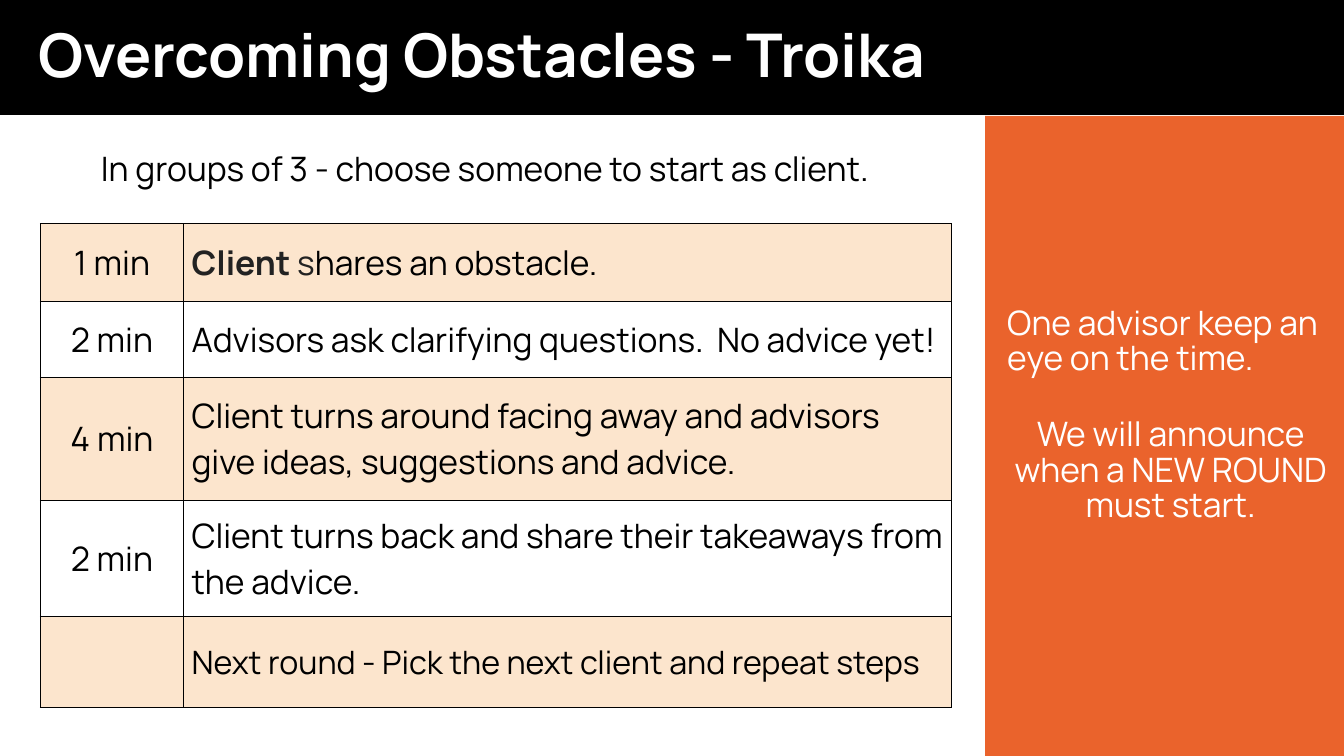
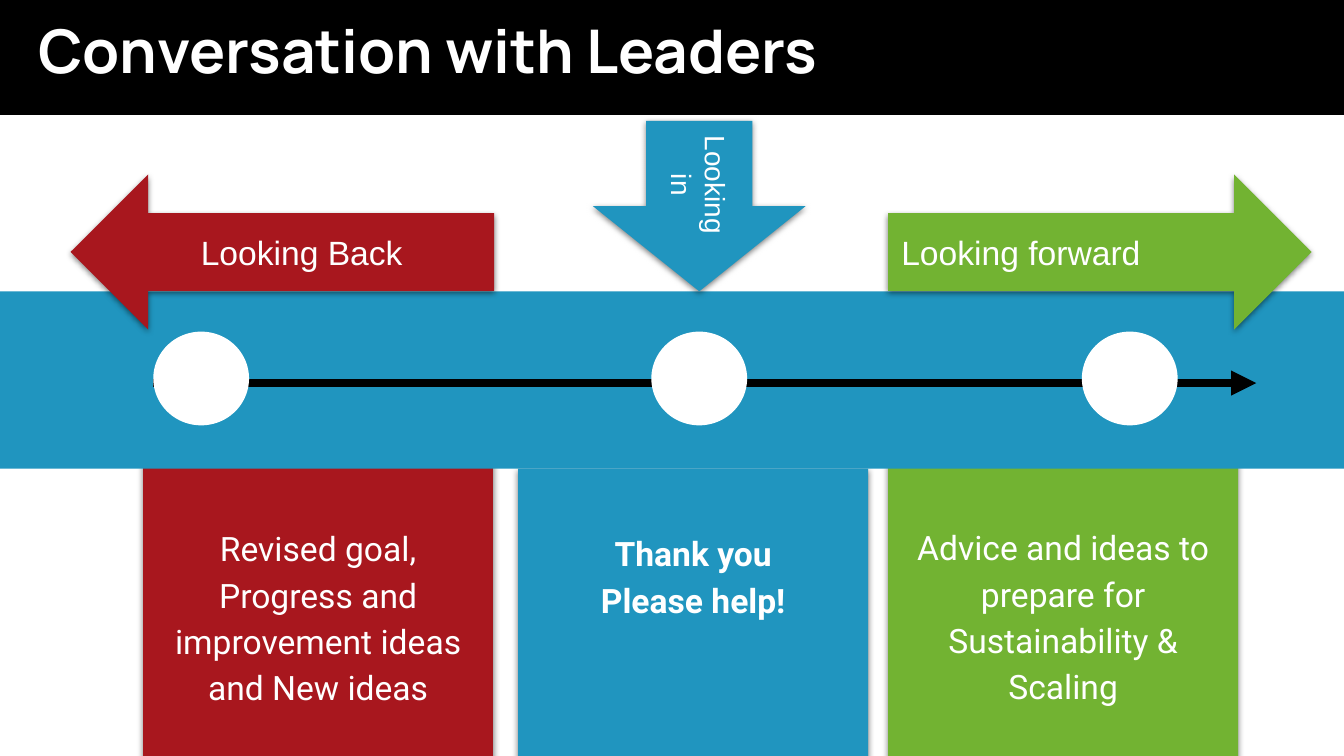
from collections import namedtuple

from lxml import etree
from pptx import Presentation
from pptx import util as u
from pptx.dml import color
from pptx.enum import shapes, text
from pptx.oxml import ns

Box = namedtuple("Box", "left top width height")
Span = namedtuple("Span", "words color bold")

BLACK, WHITE, INK = "000000", "FFFFFF", "222222"
ORANGE, CREAM = "EA632C", "FCE5CD"
RED, BLUE, GREEN = "A8171E", "2095BF", "72B332"
WIDTH, HEIGHT, BAND_HEIGHT = 13.33, 7.5, 1.14
LEFT, CENTER = text.PP_ALIGN.LEFT, text.PP_ALIGN.CENTER
TOP, MIDDLE = text.MSO_ANCHOR.TOP, text.MSO_ANCHOR.MIDDLE
SHAPE = shapes.MSO_SHAPE


def rgb(value):
    return color.RGBColor.from_string(value)


def inches(values):
    return [u.Inches(value) for value in values]


def add_xml(parent, tag, **attributes):
    return etree.SubElement(parent, ns.qn(tag), attributes)


def add_spans(para, spans, font, size, align=LEFT, spacing=None):
    para.alignment = align
    if spacing:
        para.line_spacing = spacing
    for span in spans:
        run = para.add_run()
        run.text = span.words
        run.font.name = font
        run.font.size = u.Pt(size)
        run.font.bold = span.bold
        run.font.color.rgb = rgb(span.color)


def set_frame(frame, insets, anchor=MIDDLE):
    frame.word_wrap = True
    frame.vertical_anchor = anchor
    (frame.margin_left, frame.margin_top,
     frame.margin_right, frame.margin_bottom) = inches(insets)


def add_lines(frame, lines, font, size, align=LEFT, spacing=None, bold=False, ink=WHITE):
    for index, line in enumerate(lines):
        para = frame.add_paragraph() if index else frame.paragraphs[0]
        add_spans(para, [Span(line, ink, bold)], font, size, align, spacing)


def add_block(page, kind, box, fill, shadow=False):
    block = page.shapes.add_shape(kind, *inches(box))
    block.fill.solid()
    block.fill.fore_color.rgb = rgb(fill)
    block.line.fill.background()
    block.shadow.inherit = False
    if shadow:
        effects = block._element.spPr.find(ns.qn("a:effectLst"))
        outer = add_xml(effects, "a:outerShdw", blurRad=str(u.Pt(4.5)), dist=str(u.Pt(1.5)),
                        dir="5400000", algn="t", rotWithShape="0")
        tint = add_xml(outer, "a:srgbClr", val=BLACK)
        add_xml(tint, "a:alpha", val="50000")
    return block


def add_label(page, box, line, size, insets, ink, **style):
    label = page.shapes.add_textbox(*inches(box))
    set_frame(label.text_frame, insets, style.pop("anchor", MIDDLE))
    add_lines(label.text_frame, [line], "Manrope", size, ink=ink, **style)


def add_page(deck, title, title_top):
    page = deck.slides.add_slide(deck.slide_layouts[6])
    add_block(page, SHAPE.RECTANGLE, Box(0, 0, WIDTH, BAND_HEIGHT), BLACK)
    add_label(page, Box(0.28, title_top, 11.5, 0.6), title, 43,
              (0.1, 0.05, 0.1, 0.05), WHITE, bold=True, spacing=0.9)
    return page


def add_borders(cell):
    properties = cell._tc.get_or_add_tcPr()
    for index, side in enumerate(("a:lnL", "a:lnR", "a:lnT", "a:lnB")):
        line = etree.Element(ns.qn(side), w=str(u.Pt(0.75)))
        add_xml(add_xml(line, "a:solidFill"), "a:srgbClr", val=BLACK)
        properties.insert(index, line)


def add_agenda(page, box, steps):
    column_widths = (1.42, box.width - 1.42)
    row_heights = (0.77, 0.75, 1.23, 1.15, 0.9)
    agenda = page.shapes.add_table(len(steps), 2, *inches(box)).table
    agenda.first_row = agenda.horz_banding = False
    for column, width in zip(agenda.columns, column_widths):
        column.width = u.Inches(width)
    for index, (minutes, spans, size) in enumerate(steps):
        agenda.rows[index].height = u.Inches(row_heights[index])
        contents = ([Span(minutes, BLACK, False)] if minutes else [], spans)
        for column, content in enumerate(contents):
            cell = agenda.cell(index, column)
            cell.fill.solid()
            cell.fill.fore_color.rgb = rgb(WHITE if index % 2 else CREAM)
            cell.vertical_anchor = MIDDLE
            cell.margin_left = cell.margin_right = u.Inches(0.08)
            cell.margin_top = cell.margin_bottom = u.Inches(0.08)
            add_borders(cell)
            add_spans(cell.text_frame.paragraphs[0], content, "Manrope", size,
                      LEFT if column else CENTER)


def add_sidebar(page, box):
    frame = add_block(page, SHAPE.RECTANGLE, box, ORANGE).text_frame
    set_frame(frame, (0.22, 0.05, 0.1, 0.45))
    add_lines(frame, ["One advisor keep an eye on the time.", "We will announce",
                      "when a NEW ROUND must start."],
              "Manrope", 24, CENTER, 0.88)
    frame.paragraphs[0].alignment = LEFT
    frame.paragraphs[1].space_before = u.Pt(29)


def add_card(page, box, fill, lines, bold=False, anchor=MIDDLE, top_inset=0.13):
    frame = add_block(page, SHAPE.RECTANGLE, box, fill, shadow=True).text_frame
    set_frame(frame, (0.13, top_inset, 0.13, 0.13), anchor)
    add_lines(frame, lines, "Roboto", 24, CENTER, 1.15, bold)


def add_arrow(page, kind, box, fill, line, size=24, align=CENTER, rotation=0):
    arrow = add_block(page, kind, box, fill, shadow=True)
    arrow.rotation = rotation
    set_frame(arrow.text_frame, [0.13] * 4)
    add_lines(arrow.text_frame, [line], "Arial", size, align)


def add_timeline(page, box):
    add_block(page, SHAPE.RECTANGLE, box, BLUE)
    axis_top = box.top + 0.91
    axis = page.shapes.add_connector(
        shapes.MSO_CONNECTOR.STRAIGHT,
        *inches((box.left + 1.52, axis_top, box.left + 12.46, axis_top)))
    axis.line.color.rgb = rgb(BLACK)
    axis.line.width = u.Pt(6)
    add_xml(axis.line._get_or_add_ln(), "a:tailEnd", type="triangle")
    add_xml(axis._element.spPr, "a:effectLst")
    for offset in (1.52, 6.46, 10.73):
        add_block(page, SHAPE.OVAL, Box(box.left + offset, box.top + 0.4, 0.95, 0.93), WHITE)


def build_troika(deck):
    page = add_page(deck, "Overcoming Obstacles - Troika", 0.28)
    add_label(page, Box(0.93, 1.4, 7.98, 0.64),
              "In groups of 3 - choose someone to start as client.", 24,
              [0.07] * 4, BLACK, anchor=TOP)
    add_sidebar(page, Box(9.77, 1.15, WIDTH - 9.77, HEIGHT - 1.15))

    def plain(words):
        return [Span(words, BLACK, False)]

    add_agenda(page, Box(0.4, 2.22, 9.04, 4.8), [
        ("1 min", [Span("Client ", INK, True), Span("s", INK, False),
                   Span("hares an obstacle.", BLACK, False)], 24),
        ("2 min", plain("Advisors ask clarifying questions.  No advice yet!"), 24),
        ("4 min", plain("Client turns around facing away and advisors give ideas, "
                        "suggestions and advice."), 24),
        ("2 min", plain("Client turns back and share their takeaways from the advice."), 24),
        ("", plain("Next round - Pick the next client and repeat steps"), 23),
    ])


def build_conversation(deck):
    page = add_page(deck, "Conversation with Leaders", 0.24)
    add_card(page, Box(8.81, 4.55, 3.47, 3.08), GREEN,
             ["Advice and ideas to prepare for Sustainability & Scaling"])
    add_card(page, Box(1.42, 4.56, 3.47, 3.08), RED,
             ["Revised goal, Progress and improvement ideas and New ideas"])
    add_card(page, Box(5.14, 4.65, 3.47, 2.98), BLUE, ["Thank you", "Please help!"],
             bold=True, anchor=TOP, top_inset=0.58)
    add_timeline(page, Box(0, 2.89, WIDTH, 1.76))
    add_arrow(page, SHAPE.RIGHT_ARROW, Box(8.81, 1.73, 4.2, 1.54), GREEN,
              "Looking forward", align=LEFT)
    add_arrow(page, SHAPE.LEFT_ARROW, Box(0.7, 1.73, 4.2, 1.54), RED, "Looking Back")
    add_arrow(page, SHAPE.RIGHT_ARROW, Box(6.09, 0.99, 1.69, 2.11), BLUE,
              "Looking in", size=20, rotation=90)


def main():
    deck = Presentation()
    deck.slide_width, deck.slide_height = inches((WIDTH, HEIGHT))
    build_troika(deck)
    build_conversation(deck)
    deck.save("out.pptx")


if __name__ == "__main__":
    main()
